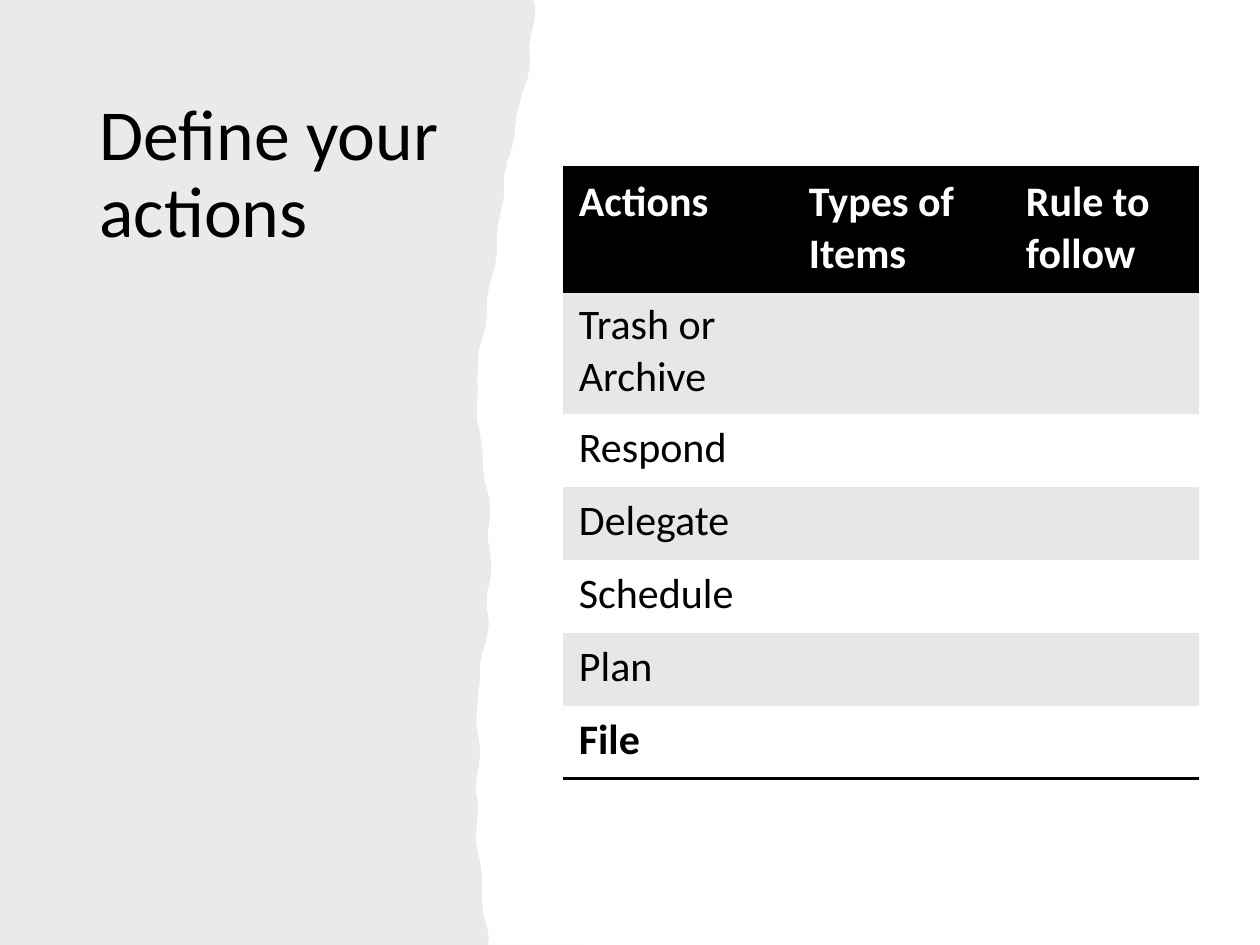
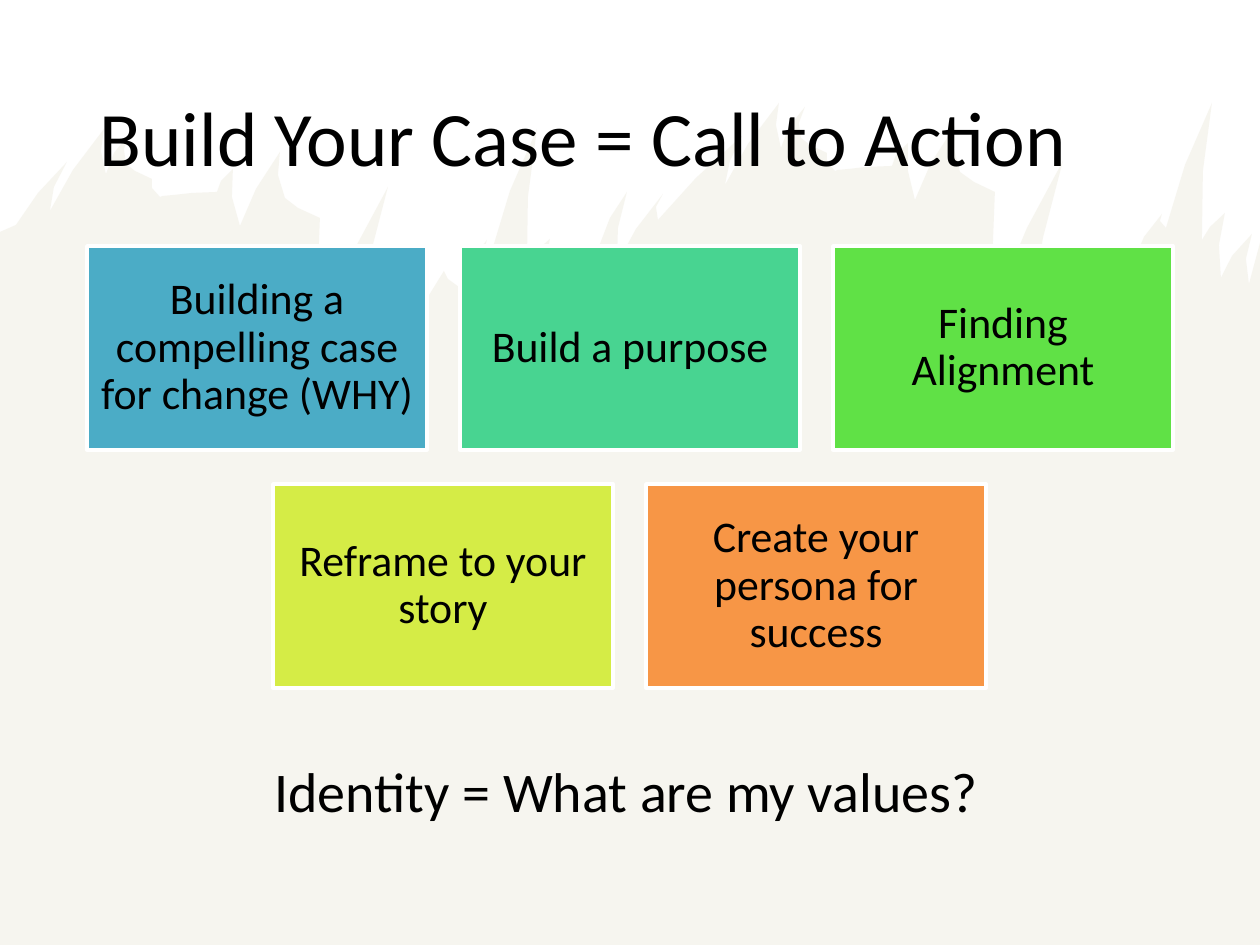
from collections import namedtuple
from math import sin

from lxml.etree import SubElement
from pptx import Presentation
from pptx.dml.color import RGBColor
from pptx.enum.shapes import MSO_SHAPE as Preset
from pptx.enum.text import MSO_ANCHOR as Anchor, MSO_AUTO_SIZE as AutoSize, PP_ALIGN as Align
from pptx.oxml.ns import qn
from pptx.util import Emu, Pt

PX = 914400 / 126
PAGE_W, PAGE_H = 1260, 945
FONT = "Calibri"
NO_STYLE = "{2D5ABB26-0587-4C30-8999-92F81FD0307C}"

BLACK = RGBColor(0x00, 0x00, 0x00)
WHITE = RGBColor(0xFF, 0xFF, 0xFF)
BAND = RGBColor(0xE7, 0xE7, 0xE7)
PAPER = RGBColor(0x82, 0x76, 0x6A)
SAND = RGBColor(0xEE, 0xEC, 0xE1)
BLUE = RGBColor(0x4B, 0xAC, 0xC6)
TEAL = RGBColor(0x48, 0xD4, 0x91)
GREEN = RGBColor(0x60, 0xE1, 0x46)
LIME = RGBColor(0xD5, 0xEC, 0x46)
ORANGE = RGBColor(0xF7, 0x96, 0x46)

Box = namedtuple("Box", "left top width height")
Stroke = namedtuple("Stroke", "tip_x tip_y foot_x foot_y")

# Torn paper: its width at equal steps down the page
PAPER_WIDTHS = [534, 530, 515, 503, 496, 486, 476, 480,
                489, 490, 487, 477, 479, 476, 481, 488]
FRAY_STEP, FRAY_DEPTH = 7, 1.5

# Brush wash: each stroke rises to a tip and drops to a foot
CLUSTER = [
    Stroke(38, 33, 21, 82), Stroke(75, 0, 77, 45), Stroke(101, 4, 97, 35),
    Stroke(123, 50, 131, 68), Stroke(145, 66, 188, 63), Stroke(204, 40, 211, 97),
    Stroke(251, 23, 256, 69), Stroke(291, 89, 295, 192), Stroke(359, 58, 327, 212),
    Stroke(341, 164, 343, 212), Stroke(383, 173, 390, 193), Stroke(415, 142, 430, 158),
    Stroke(458, 111, 462, 125), Stroke(508, 0, 498, 137), Stroke(521, 110, 517, 175),
    Stroke(548, 131, 545, 181),
]
BRIDGE = [Stroke(19, 149, 27, 141), Stroke(54, 89, 44, 161), Stroke(90, 91, 85, 117)]
# The cluster comes twice, with the bridge between: strokes, left, top
STROKE_RUNS = [(CLUSTER, 29, 26), (BRIDGE, 573, 0), (CLUSTER, 704, 0)]
STROKE_BOW = 4

ACTIONS = ["Trash or Archive", "Respond", "Delegate", "Schedule", "Plan", "File"]
CARD_ROWS = [
    [("Building a compelling case for change (WHY)", BLUE),
     ("Build a purpose", TEAL),
     ("Finding Alignment", GREEN)],
    [("Reframe to your story", LIME),
     ("Create your persona for success", ORANGE)],
]


def px(length):
    return Emu(round(length * PX))


def place(box):
    return [px(length) for length in box]


def style_text(frame, size, color=BLACK, bold=False, align=Align.LEFT, spacing=None):
    for para in frame.paragraphs:
        para.alignment = align
        para.line_spacing = spacing
        for span in para.runs:
            span.font.name = FONT
            span.font.size = Pt(size)
            span.font.bold = bold
            span.font.color.rgb = color


def add_title(page, box, text, size):
    title = page.shapes.title
    title.left, title.top, title.width, title.height = place(box)
    frame = title.text_frame
    frame.text = text
    frame.word_wrap = True
    frame.auto_size = AutoSize.NONE
    frame.vertical_anchor = Anchor.MIDDLE
    style_text(frame, size, spacing=0.9)


def add_backdrop(page, box, points, color, opacity):
    """Draw a translucent outline behind everything else on the page."""
    builder = page.shapes.build_freeform(*points[0], scale=PX)
    builder.add_line_segments(points[1:], close=True)
    shape = builder.convert_to_shape(px(box.left), px(box.top))
    shape.shadow.inherit = False
    shape.line.fill.background()
    shape.fill.solid()
    shape.fill.fore_color.rgb = color
    fill_color = next(shape.element.spPr.iter(qn("a:srgbClr")))
    SubElement(fill_color, qn("a:alpha"), val=str(opacity * 1000))
    shape.element.getparent().insert(2, shape.element)


def paper_edge(height):
    """Join the paper widths by straight lines and fray them with a sine."""
    step = height / (len(PAPER_WIDTHS) - 1)
    edge = []
    for y in range(0, height, FRAY_STEP):
        index = int(y / step)
        start, end = PAPER_WIDTHS[index:index + 2]
        x = start + (end - start) * (y / step - index)
        edge.append((x + FRAY_DEPTH * sin(y), y))
    return edge + [(PAPER_WIDTHS[-1], height)]


def add_torn_paper(page, box):
    # The paper ends in a thin point along the foot of the page
    corners = [(box.width, box.height), (0, box.height), (0, 0)]
    add_backdrop(page, box, paper_edge(box.height) + corners, PAPER, 15)


def bowed_line(start, end):
    """Return a point bowed to the left of the middle, then the end."""
    middle = ((start[0] + end[0]) / 2 - STROKE_BOW, (start[1] + end[1]) / 2)
    return [middle, end]


def add_brush_wash(page, box):
    points = [(0, 129), (16, 122)]
    for strokes, left, top in STROKE_RUNS:
        for stroke in strokes:
            tip = (left + stroke.tip_x, top + stroke.tip_y)
            foot = (left + stroke.foot_x, top + stroke.foot_y)
            points += bowed_line(points[-1], tip) + bowed_line(tip, foot)
    points += [(box.width, 140), (box.width, box.height), (0, box.height)]
    add_backdrop(page, box, points, SAND, 50)


def add_border(cell, sides):
    properties = cell._tc.get_or_add_tcPr()
    for index, side in enumerate(sides):
        line = SubElement(properties, qn(f"a:ln{side}"), w=str(Pt(2)))
        fill = SubElement(line, qn("a:solidFill"))
        SubElement(fill, qn("a:srgbClr"), val=str(BLACK))
        properties.insert(index, line)


def add_action_table(page, box):
    rows = [["Actions", "Types of Items", "Rule to follow"]]
    rows += [[action, "", ""] for action in ACTIONS]
    last = len(rows) - 1
    holder = page.shapes.add_table(len(rows), 3, *place(box))
    next(holder.element.iter(qn("a:tableStyleId"))).text = NO_STYLE
    table = holder.table
    table.first_row = table.horz_banding = False
    for column, width in zip(table.columns, (230, 217, box.width - 447)):
        column.width = px(width)

    for r, texts in enumerate(rows):
        table.rows[r].height = px(123 if r < 2 else 73)
        header = r == 0
        for c, text in enumerate(texts):
            cell = table.cell(r, c)
            cell.margin_left = cell.margin_right = px(16)
            cell.margin_top = cell.margin_bottom = px(9)
            cell.fill.solid()
            cell.fill.fore_color.rgb = BLACK if header else BAND if r % 2 else WHITE
            cell.text_frame.text = text
            style_text(cell.text_frame, 24, WHITE if header else BLACK, r in (0, last))
            if header:
                add_border(cell, "TB")
            elif r == last:
                add_border(cell, "B")


def add_card(page, box, text, color):
    card = page.shapes.add_shape(Preset.RECTANGLE, *place(box))
    card.shadow.inherit = False
    card.fill.solid()
    card.fill.fore_color.rgb = color
    card.line.color.rgb = WHITE
    card.line.width = Pt(2)
    frame = card.text_frame
    frame.text = text
    frame.word_wrap = True
    frame.vertical_anchor = Anchor.MIDDLE
    frame.margin_left = frame.margin_right = px(12)
    frame.margin_top = frame.margin_bottom = px(12)
    style_text(frame, 25, align=Align.CENTER, spacing=0.9)


def add_cards(page, box):
    """Lay the cards out in centred rows."""
    width, height, gap = 340, 204, 33
    for r, cards in enumerate(CARD_ROWS):
        row_width = len(cards) * (width + gap) - gap
        left = box.left + (box.width - row_width) // 2
        top = box.top + r * (box.height - height)
        for c, (text, color) in enumerate(cards):
            add_card(page, Box(left + c * (width + gap), top, width, height), text, color)


def add_closing_line(page, box):
    frame = page.shapes.add_textbox(*place(box)).text_frame
    frame.text = "Identity = What are my values?"
    frame.word_wrap = True
    style_text(frame, 32)


def build_actions_page(page):
    add_torn_paper(page, Box(0, 0, 585, PAGE_H))
    add_title(page, Box(87, 84, 387, 184), "Define your actions", 41)
    add_action_table(page, Box(563, 168, 636, 611))


def build_case_page(page):
    add_brush_wash(page, Box(0, 103, PAGE_W, 842))
    add_title(page, Box(87, 50, 1086, 183), "Build Your Case = Call to Action", 44)
    add_cards(page, Box(87, 246, 1086, 442))
    add_closing_line(page, Box(262, 750, 819, 81))


def main():
    deck = Presentation()
    deck.slide_width, deck.slide_height = px(PAGE_W), px(PAGE_H)
    title_only = deck.slide_layouts[5]
    for build in (build_actions_page, build_case_page):
        build(deck.slides.add_slide(title_only))
    deck.save("out.pptx")


if __name__ == "__main__":
    main()
